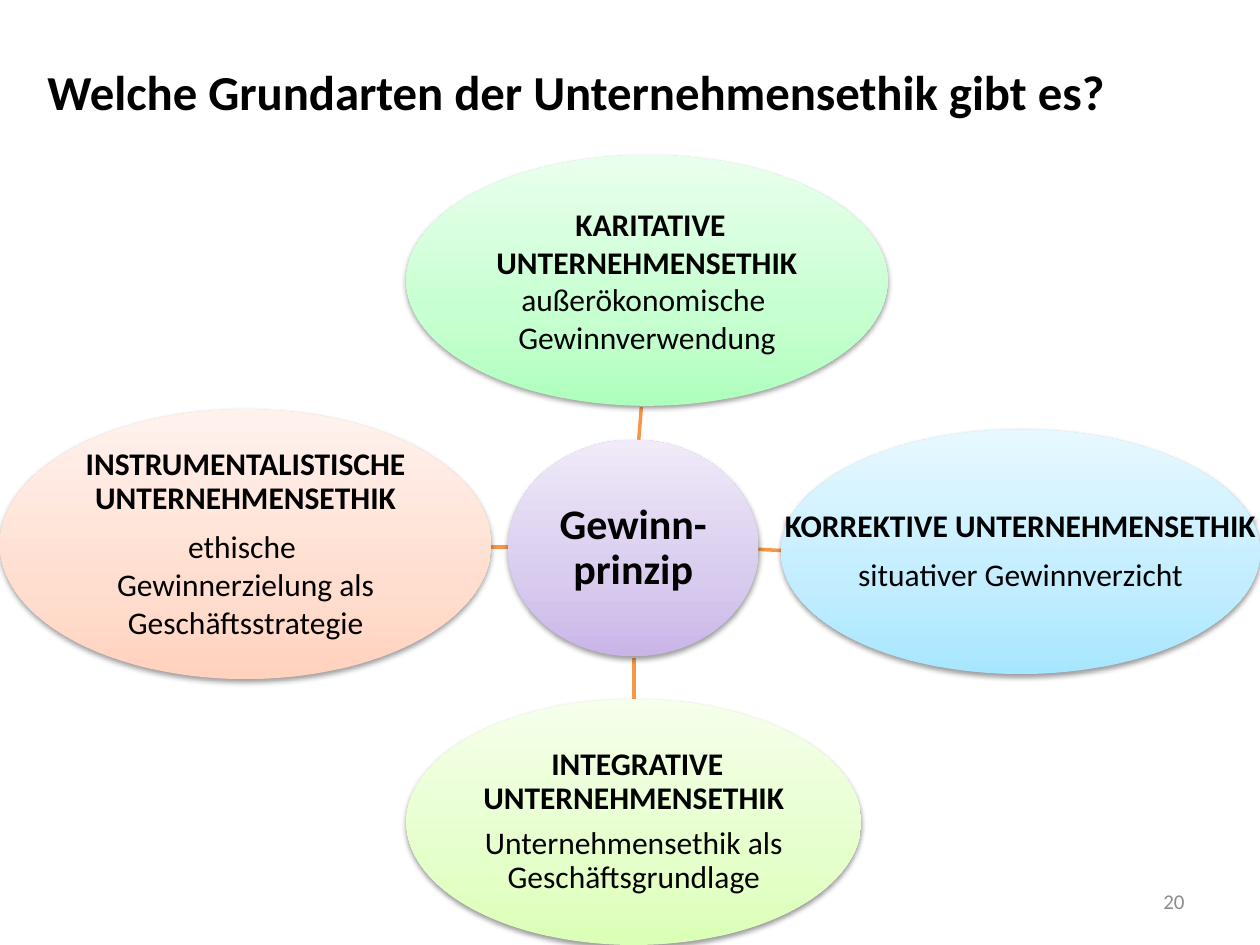
from copy import deepcopy

from lxml import etree
from pptx import Presentation
from pptx import util as u
from pptx.dml import color
from pptx.enum import shapes, text
from pptx.oxml import ns

CENTER, LEFT, RIGHT = text.PP_ALIGN.CENTER, text.PP_ALIGN.LEFT, text.PP_ALIGN.RIGHT


def rgb(value):
    return color.RGBColor.from_string(value)


class SlideBuilder:
    font = "Calibri"
    ink = "000000"
    line_color = "F79646"

    def __init__(self, slide):
        self.slide = slide

    def add_run(self, paragraph, words, size, bold, ink):
        run = paragraph.add_run()
        run.text = words
        run.font.name = self.font
        run.font.size = u.Pt(size)
        run.font.bold = bold
        run.font.color.rgb = rgb(ink)

    def set_frame(self, shape, inset, wrap=True):
        frame = shape.text_frame
        frame.word_wrap = wrap
        frame.vertical_anchor = text.MSO_ANCHOR.MIDDLE
        frame.margin_left = frame.margin_right = u.Pt(inset)
        frame.margin_top = frame.margin_bottom = u.Pt(inset)
        return frame

    def label(self, box, words, size, bold=False, align=LEFT, ink=ink):
        shape = self.slide.shapes.add_textbox(*map(u.Pt, box))
        paragraph = self.set_frame(shape, 7.2).paragraphs[0]
        paragraph.alignment = align
        self.add_run(paragraph, words, size, bold, ink)

    def ellipse(self, box, colors, lines, size=18, wrap=True):
        shape = self.slide.shapes.add_shape(shapes.MSO_SHAPE.OVAL, *map(u.Pt, box))
        shape.line.fill.background()
        self.shade(shape, colors)
        self.drop_shadow(shape)
        frame = self.set_frame(shape, 1, wrap)
        for index, (words, bold, tight) in enumerate(lines):
            paragraph = frame.add_paragraph() if index else frame.paragraphs[0]
            paragraph.alignment = CENTER
            if tight:
                paragraph.line_spacing = 0.9
                paragraph.space_after = u.Pt(size * 0.35)
            self.add_run(paragraph, words, size, bold, self.ink)

    def shade(self, shape, colors):
        shape.fill.gradient()
        shape.fill.gradient_angle = 90
        stop_list = shape._element.spPr.find(".//" + ns.qn("a:gsLst"))
        stop_list.insert(1, deepcopy(stop_list[0]))
        for stop, position, value in zip(shape.fill.gradient_stops, (0, 0.35, 1), colors):
            stop.position = position
            stop.color.rgb = rgb(value)

    def drop_shadow(self, shape):
        shape.shadow.inherit = False
        effects = shape._element.spPr.find(ns.qn("a:effectLst"))
        shadow = etree.SubElement(effects, ns.qn("a:outerShdw"), blurRad=str(u.Pt(3.1)),
                                  dist=str(u.Pt(1.6)), dir="5400000", rotWithShape="0")
        tone = etree.SubElement(shadow, ns.qn("a:srgbClr"), val="000000")
        etree.SubElement(tone, ns.qn("a:alpha"), val="38000")

    def spoke(self, *ends):
        connector = self.slide.shapes.add_connector(
            shapes.MSO_CONNECTOR.STRAIGHT, *map(u.Pt, ends))
        connector.line.color.rgb = rgb(self.line_color)
        connector.line.width = u.Pt(2)
        etree.SubElement(connector._element.spPr, ns.qn("a:effectLst"))


def main():
    presentation = Presentation()
    presentation.slide_width, presentation.slide_height = u.Pt(720), u.Pt(540)
    builder = SlideBuilder(presentation.slides.add_slide(presentation.slide_layouts[6]))

    builder.label((20, 30, 654, 44), "Welche Grundarten der Unternehmensethik gibt es?", 27.9, True)

    builder.spoke(433.4, 313.9, 446.4, 314.6)
    builder.spoke(365, 251.3, 366.5, 232.6)
    builder.spoke(362.2, 375.8, 362.2, 399.6)
    builder.spoke(290.2, 312.5, 280.8, 312.5)

    builder.ellipse((290.2, 251.3, 143.3, 123.8), ("C9B5E8", "D8CBEE", "F0EAF9"),
                    [("Gewinn- prinzip", True, True)], size=24)
    builder.ellipse((446.4, 245.5, 273.6, 139.7), ("A7E6FF", "C1EDFF", "E7F8FF"),
                    [("KORREKTIVE UNTERNEHMENSETHIK", True, True),
                     ("situativer Gewinnverzicht", False, False)], wrap=False)
    builder.ellipse((232.2, 88.6, 275, 143.3), ("AFFFBD", "C6FFD0", "E9FFED"),
                    [(" KARITATIVE", True, False),
                     ("UNTERNEHMENSETHIK", True, False),
                     ("außerökonomische ", False, False),
                     ("Gewinnverwendung", False, False)])
    builder.ellipse((232.2, 399.6, 259.9, 140.4), ("DBFFB6", "E5FFCB", "F5FFEB"),
                    [(" INTEGRATIVE UNTERNEHMENSETHIK", True, True),
                     ("Unternehmensethik als Geschäftsgrundlage", False, True)])
    builder.ellipse((0, 234, 280.8, 154.1), ("FFD2BD", "FFDED0", "FFF2ED"),
                    [("INSTRUMENTALISTISCHE UNTERNEHMENSETHIK", True, True),
                     ("ethische ", False, False),
                     ("Gewinnerzielung als Geschäftsstrategie", False, False)])

    builder.label((516, 500.5, 168, 28.8), "20", 12, align=RIGHT, ink="8C8C8C")
    presentation.save("out.pptx")


if __name__ == "__main__":
    main()
